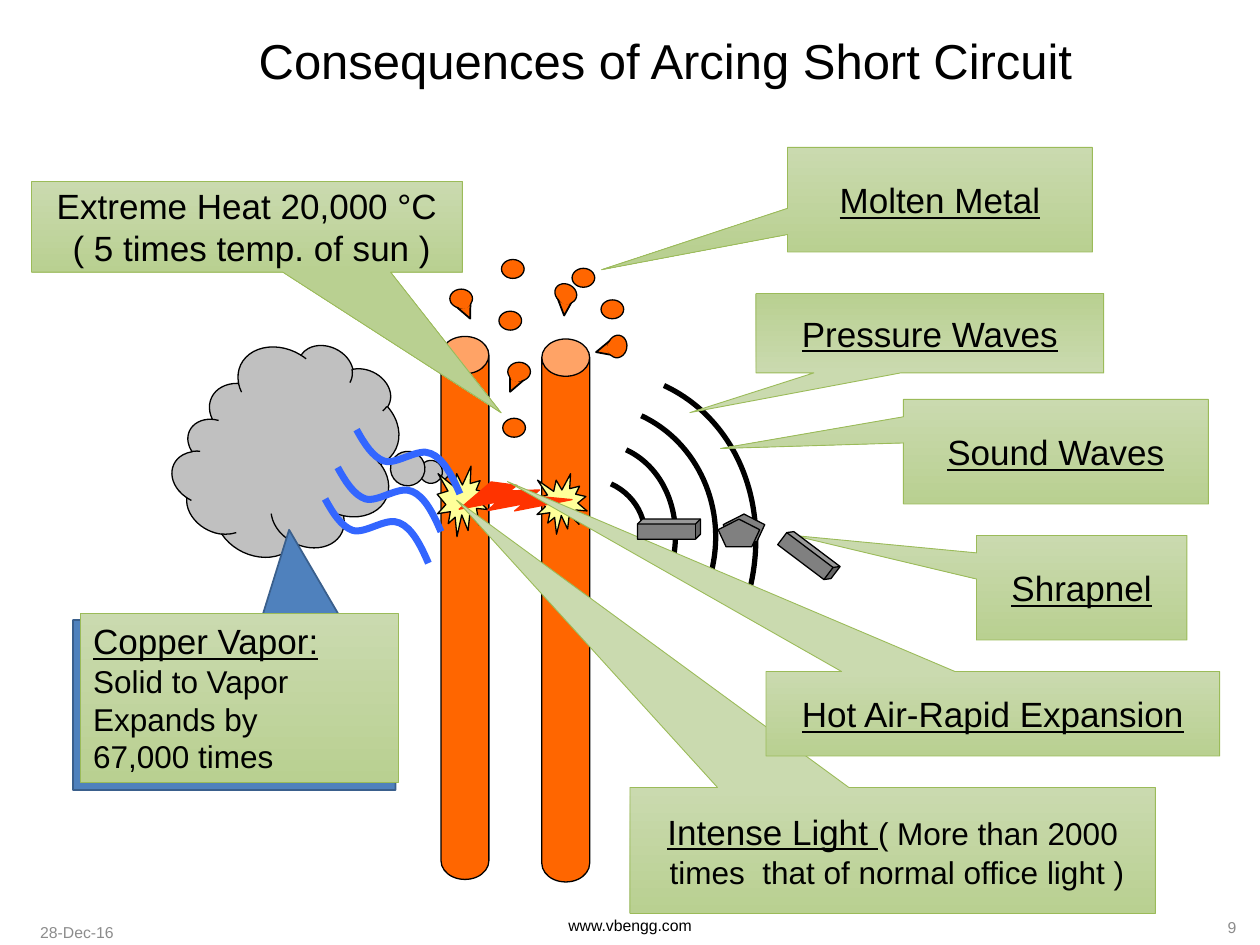
from dataclasses import dataclass
from math import cos, radians, sin
from typing import NamedTuple

from lxml import etree
from pptx import Presentation
from pptx.dml.color import RGBColor
from pptx.enum.shapes import MSO_SHAPE
from pptx.enum.text import MSO_ANCHOR, PP_ALIGN
from pptx.oxml.ns import qn
from pptx.util import Cm, Pt

CALLOUT, CAN, CUBE = MSO_SHAPE.RECTANGULAR_CALLOUT, MSO_SHAPE.CAN, MSO_SHAPE.CUBE
RECT, OVAL, TRIANGLE = MSO_SHAPE.RECTANGLE, MSO_SHAPE.OVAL, MSO_SHAPE.ISOSCELES_TRIANGLE
CLOUD, BURST, BOLT = MSO_SHAPE.CLOUD_CALLOUT, MSO_SHAPE.EXPLOSION1, MSO_SHAPE.LIGHTNING_BOLT
PENTAGON = MSO_SHAPE.REGULAR_PENTAGON
LEFT, CENTER, RIGHT = PP_ALIGN.LEFT, PP_ALIGN.CENTER, PP_ALIGN.RIGHT
TOP, MIDDLE = MSO_ANCHOR.TOP, MSO_ANCHOR.MIDDLE

COLORS = {
    "text": "000000", "muted": "8C8C8C", "copper": "FF6600", "vapor": "C0C0C0",
    "flash": "FFFF99", "arc": "FF3300", "heat": "3366FF", "metal": "808080",
    "light": "CADAAF", "dark": "B9D091", "edge": "9BBB59",
    "backing": "4F81BD", "backing_edge": "3A5F8C",
}
FONT = "Arial"


class Run(NamedTuple):
    text: str
    size: float = 20
    underline: bool = False
    color: str = "text"


class Box(NamedTuple):
    left: float
    top: float
    width: float
    height: float


@dataclass
class Callout:
    box: Box
    tip: tuple[float, float]
    lines: list[list[Run]]
    angle: float = 270


@dataclass
class Drop:
    x: float
    y: float
    tail: float       # clockwise from straight down
    tilt: float = 0


def inch(value: float) -> Cm:
    return Cm(value * 2.54)


def rgb(name: str) -> RGBColor:
    return RGBColor.from_string(COLORS[name])


def write(tf, lines: list[list[Run]], align=CENTER, anchor=MIDDLE, wrap=False) -> None:
    for name, value in {"word_wrap": wrap, "vertical_anchor": anchor}.items():
        setattr(tf, name, value)
    for i, runs in enumerate(lines):
        p = tf.paragraphs[0] if i == 0 else tf.add_paragraph()
        p.alignment = align
        for run in runs:
            r = p.add_run()
            r.text = run.text
            style = {"name": FONT, "size": Pt(run.size), "underline": run.underline}
            for name, value in style.items():
                setattr(r.font, name, value)
            r.font.color.rgb = rgb(run.color)


def outline(sp, color: str | None, width: float) -> None:
    sp.shadow.inherit = False
    if color is None:
        sp.line.fill.background()
    else:
        sp.line.color.rgb = rgb(color)
        sp.line.width = Pt(width)


def add_shape(shapes, kind, box: Box, fill: str, line: str | None = "text",
              width: float = 0.75, rotation: float = 0, adj: tuple = ()):
    sp = shapes.add_shape(kind, *map(inch, box))
    sp.rotation = rotation
    for i, value in enumerate(adj):
        sp.adjustments[i] = value
    sp.fill.solid()
    sp.fill.fore_color.rgb = rgb(fill)
    outline(sp, line, width)
    return sp


def shade(sp, angle: float = 270) -> None:
    sp.fill.gradient()
    sp.fill.gradient_angle = angle
    for stop, color in zip(sp.fill.gradient_stops, ("light", "dark")):
        stop.color.rgb = rgb(color)


def add_callout(shapes, c: Callout) -> None:
    sp = add_shape(shapes, CALLOUT, c.box, "light", "edge", 0.5, adj=c.tip)
    shade(sp, c.angle)
    write(sp.text_frame, c.lines)


def add_curve(shapes, points: list, color: str, width: float) -> None:
    """Draw chained cubic curves: a start, then three points per curve."""
    start, *rest = [tuple(map(inch, point)) for point in points]
    builder = shapes.build_freeform(*start)
    builder.add_line_segments(rest, close=False)
    sp = builder.convert_to_shape()
    # Turn every three line segments into one Bézier segment
    segments = list(sp._element.iter(qn("a:lnTo")))
    for k in range(0, len(segments), 3):
        curve = etree.SubElement(segments[k].getparent(), qn("a:cubicBezTo"))
        for segment in segments[k:k + 3]:
            curve.append(segment[0])
            segment.getparent().remove(segment)
    sp.fill.background()
    outline(sp, color, width)


def add_drop(shapes, d: Drop) -> None:
    a = radians(d.tail)
    parts = [(TRIANGLE, 0.1, 0.14, 0.15, d.tail + 180, "text", 1),
             (OVAL, 0, 0.18, 0.15, d.tilt, "text", 0.75),
             (OVAL, 0.04, 0.11, 0.09, d.tilt, None, 0)]
    for kind, shift, w, h, rotation, line, width in parts:
        x, y = d.x - shift * sin(a), d.y + shift * cos(a)
        add_shape(shapes, kind, Box(x - w / 2, y - h / 2, w, h), "copper", line, width, rotation)


def label(text: str) -> list[list[Run]]:
    return [[Run(text, underline=True)]]


ARCS = [
    [(4.85, 3.84), (5.07, 3.94), (5.18, 4.19), (5.08, 4.39)],
    [(4.97, 3.57), (5.29, 3.72), (5.44, 4.12), (5.32, 4.53)],
    [(5.09, 3.3), (5.54, 3.51), (5.78, 4.04), (5.64, 4.56)],
    [(5.27, 3.06), (5.85, 3.33), (6.13, 4.02), (5.94, 4.72)],
]
HEAT_STARTS = [(2.83, 3.41), (2.68, 3.71), (2.58, 3.96)]
HEAT_WAVE = [(0, 0), (0.06, 0.11), (0.13, 0.22), (0.22, 0.25),
             (0.32, 0.28), (0.49, 0.14), (0.59, 0.19), (0.69, 0.23), (0.76, 0.37), (0.82, 0.51)]
SPATTER = [(3.96, 2.47), (3.98, 2.06), (3.99, 3.32), (4.77, 2.38), (4.54, 2.13)]
DROPS = [Drop(3.66, 2.37, -24.2), Drop(4.12, 2.95, 24.2),
         Drop(4.49, 2.33, 4.3, 28.5), Drop(4.9, 2.75, 75.3, 99.5)]
CALLOUTS = [
    Callout(Box(6, 2.33, 2.76, 0.63), (-0.69, 1), label("Pressure Waves"), 90),
    Callout(Box(6.25, 1.17, 2.42, 0.83), (-1.11, 0.67), label("Molten Metal")),
    Callout(Box(5, 6.25, 4.17, 1), (-0.83, -2.78),
            [[Run("Intense Light ", underline=True), Run("( More than 2000", 18)],
             [Run(" times  that of normal office light )", 18)]]),
    Callout(Box(6.08, 5.33, 3.6, 0.67), (-1.07, -2.75), label("Hot Air-Rapid Expansion")),
    Callout(Box(0.25, 1.44, 3.42, 0.72), (0.59, 2.05),
            [[Run("Extreme Heat 20,000 °C")], [Run(" ( 5 times temp. of sun )")]]),
    Callout(Box(7.75, 4.25, 1.67, 0.83), (-1.37, -0.5), label("Shrapnel")),
    Callout(Box(7.17, 3.17, 2.42, 0.83), (-1.1, -0.03), label("Sound Waves")),
]
VAPOR_LINES = label("Copper Vapor:") + [
    [Run(t, 18)] for t in ("Solid to Vapor", "Expands by", "67,000 times")]
SHRAPNEL = [(CUBE, Box(5.06, 4.12, 0.5, 0.16), 0), (CUBE, Box(6.17, 4.33, 0.5, 0.16), 37),
            (PENTAGON, Box(5.74, 4.08, 0.33, 0.22), 0), (PENTAGON, Box(5.7, 4.12, 0.33, 0.22), 0)]
FOOTERS = [(Box(0.22, 7.2, 2.25, 0.4), "28-Dec-16", LEFT, "muted"),
           (Box(3.31, 7.14, 3.38, 0.4), "www.vbengg.com", CENTER, "text"),
           (Box(7.66, 7.16, 2.25, 0.4), "9", RIGHT, "muted")]


def main() -> None:
    prs = Presentation()
    prs.slide_width, prs.slide_height = Cm(25.4), Cm(19.05)
    s = prs.slides.add_slide(prs.slide_layouts[5])

    # Title
    title = s.shapes.title
    for name, value in zip(("left", "top", "width", "height"), (1.42, 0.17, 7.72, 0.67)):
        setattr(title, name, inch(value))
    write(title.text_frame, [[Run("Consequences of Arcing Short Circuit", 28)]], wrap=True)
    title.text_frame.paragraphs[0].line_spacing = 0.9

    # Conductors and vapor cloud
    shapes = s.shapes.add_group_shape().shapes
    for left, top in ((3.5, 2.67), (4.3, 2.69)):
        add_shape(shapes, CAN, Box(left, top, 0.38, 4.31), "copper", adj=(0.78,))
    cloud = add_shape(shapes, CLOUD, Box(1.44, 2.77, 1.77, 1.64), "vapor",
                      rotation=295.2, adj=(-0.2, 0.7))
    cloud._element.spPr.get_or_add_xfrm().set("flipH", "1")

    # Pressure arcs, spatter and the arc between the conductors
    add_shape(shapes, BURST, Box(4.26, 3.76, 0.4, 0.48), "flash")
    for arc in ARCS:
        add_curve(shapes, arc, "text", 3)
    for x, y in SPATTER:
        add_shape(shapes, OVAL, Box(x, y, 0.18, 0.15), "copper")
    add_shape(shapes, BURST, Box(3.47, 3.7, 0.4, 0.56), "flash")
    add_shape(shapes, BOLT, Box(3.66, 3.76, 0.83, 0.42), "arc", "arc", rotation=332.6)
    for x, y in HEAT_STARTS:
        add_curve(shapes, [(x + dx, y + dy) for dx, dy in HEAT_WAVE], "heat", 4)
    for drop in DROPS:
        add_drop(shapes, drop)

    # Labels
    add_shape(shapes, CALLOUT, Box(0.58, 4.92, 2.56, 1.35), "backing", "backing_edge", 1,
              adj=(0.17, -1.03))
    vapor = add_shape(shapes, RECT, Box(0.64, 4.87, 2.52, 1.34), "light", "edge", 0.5)
    shade(vapor)
    write(vapor.text_frame, VAPOR_LINES, LEFT, TOP, True)
    for callout in CALLOUTS:
        add_callout(shapes, callout)

    # Shrapnel
    for kind, box, rotation in SHRAPNEL:
        add_shape(shapes, kind, box, "metal", rotation=rotation)

    # Footer
    for box, text, align, color in FOOTERS:
        tb = s.shapes.add_textbox(*map(inch, box))
        write(tb.text_frame, [[Run(text, 9, color=color)]], align, wrap=True)

    prs.save("out.pptx")


if __name__ == "__main__":
    main()
